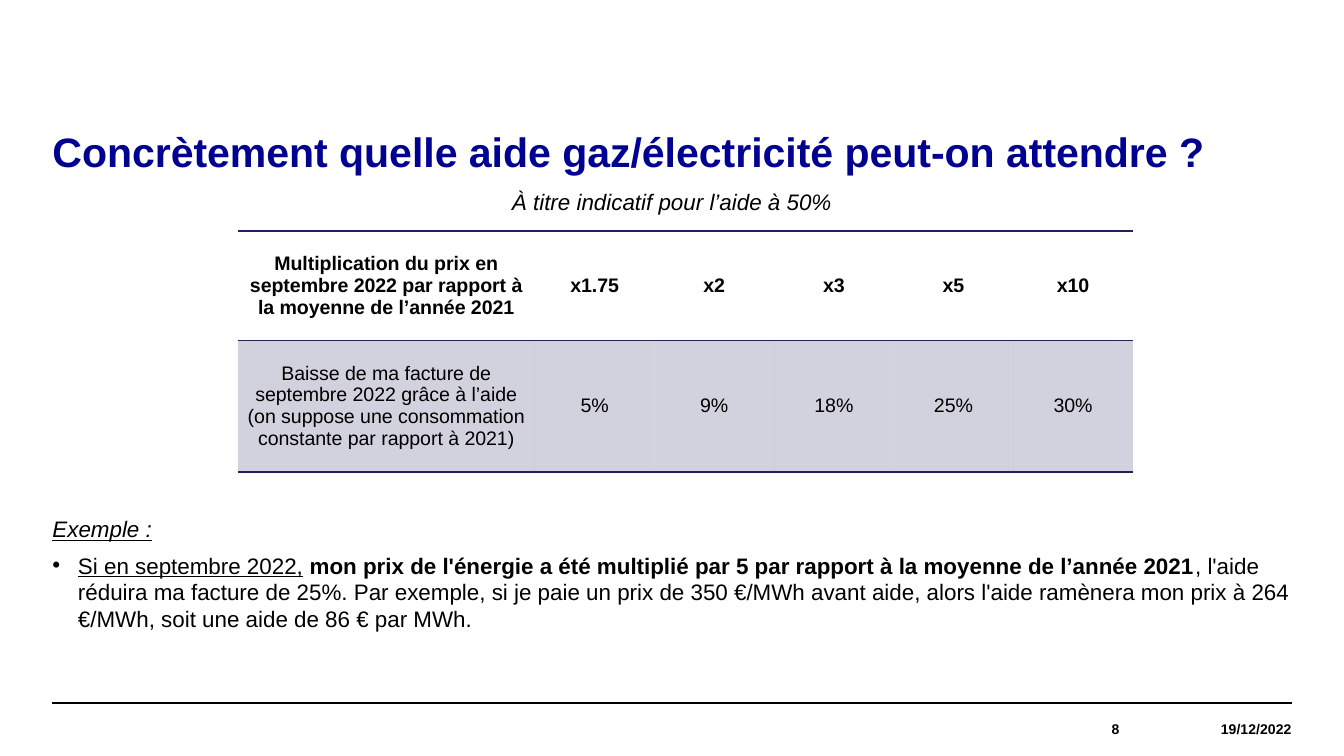
"""Build the slide on the expected gas and electricity aid."""
import pptx
import pptx.dml.color
import pptx.enum.shapes
import pptx.enum.text
import pptx.oxml.ns
import pptx.util
from lxml import etree

Inches = pptx.util.Inches
Pt = pptx.util.Pt
ALIGN = pptx.enum.text.PP_ALIGN
ANCHOR = pptx.enum.text.MSO_ANCHOR
qn = pptx.oxml.ns.qn
COLORS = {"title": "000091", "text": "000000", "table": "21215A"}
LEFT, WIDTH = 0.39, 9.22


def add_run(paragraph, text, size, color="text", bold=False, italic=False, underline=False):
    """Add one formatted run to a paragraph."""
    run = paragraph.add_run()
    run.text = text
    run.font.name = "Arial"
    run.font.size = Pt(size)
    run.font.bold = bold
    run.font.italic = italic
    run.font.underline = underline
    run.font.color.rgb = pptx.dml.color.RGBColor.from_string(COLORS[color])


def place(shape, left, top, width, height, anchor):
    """Position a text shape and clear its margins."""
    shape.left, shape.top = Inches(left), Inches(top)
    shape.width, shape.height = Inches(width), Inches(height)
    frame = shape.text_frame
    frame.word_wrap = True
    frame.auto_size = pptx.enum.text.MSO_AUTO_SIZE.NONE
    frame.vertical_anchor = anchor
    frame.margin_left = frame.margin_right = frame.margin_top = frame.margin_bottom = 0
    return frame


presentation = pptx.Presentation()
presentation.slide_width = Inches(10)
presentation.slide_height = Inches(10) * 9 // 16
slide = presentation.slides.add_slide(presentation.slide_layouts[1])

title = place(slide.shapes.title, LEFT, 0.98, WIDTH, 0.79, ANCHOR.TOP).paragraphs[0]
title.alignment = ALIGN.LEFT
title.line_spacing = 0.9
add_run(title, "Concrètement quelle aide gaz/électricité peut-on attendre ?", 22, "title", bold=True)

body = place(slide.placeholders[1], LEFT, 1.4, WIDTH, 3.62, ANCHOR.TOP)
body_paragraphs = [
    (ALIGN.CENTER, 0, False, [("À titre indicatif pour l’aide à 50%", {"italic": True})]),
    (ALIGN.LEFT, 156, False, [("Exemple :", {"italic": True, "underline": True})]),
    (ALIGN.LEFT, 0, True, [
        ("Si en septembre 2022,", {"underline": True}),
        (" ", {}),
        ("mon prix de l'énergie a été multiplié par 5 par rapport à la moyenne de l’année 2021",
         {"bold": True}),
        (", l'aide réduira ma facture de 25%. Par exemple, si je paie un prix de 350 €/MWh avant aide, "
         "alors l'aide ramènera mon prix à 264 €/MWh, soit une aide de 86 € par MWh.", {}),
    ]),
]
for index, (alignment, space_before, bulleted, runs) in enumerate(body_paragraphs):
    paragraph = body.paragraphs[0] if index == 0 else body.add_paragraph()
    paragraph.alignment = alignment
    paragraph.line_spacing = 1.0
    paragraph.space_before = Pt(space_before)
    paragraph.space_after = Pt(5)
    properties = paragraph._p.get_or_add_pPr()
    indent = Inches(0.19) if bulleted else 0
    properties.set("marL", str(indent))
    properties.set("indent", str(-indent))
    if bulleted:
        etree.SubElement(properties, qn("a:buChar")).set("char", "•")
    else:
        etree.SubElement(properties, qn("a:buNone"))
    for text, style in runs:
        add_run(paragraph, text, 12, **style)

rows = [
    [["Multiplication du prix en septembre 2022 par rapport à la moyenne de l’année 2021"],
     ["x1.75"], ["x2"], ["x3"], ["x5"], ["x10"]],
    [["Baisse de ma facture de septembre 2022 grâce à l’aide",
      "(on suppose une consommation constante par rapport à 2021)"],
     ["5%"], ["9%"], ["18%"], ["25%"], ["30%"]],
]
borders = [[("a:lnT", 1), ("a:lnB", 0.5)], [("a:lnT", 0.5), ("a:lnB", 1)]]
graphic = slide.shapes.add_table(2, 6, Inches(1.77), Inches(1.72), Inches(6.66), Inches(1.79))
table = graphic.table
table.horz_banding = False
table._tbl.tblPr.find(qn("a:tableStyleId")).text = "{2D5ABB26-0587-4C30-8999-92F81FD0307C}"
for index, column in enumerate(table.columns):
    column.width = Inches(2.21 if index == 0 else 0.89)
for row, height in zip(table.rows, (0.81, 0.98)):
    row.height = Inches(height)
for row_index, row in enumerate(rows):
    for column_index, lines in enumerate(row):
        cell = table.cell(row_index, column_index)
        cell.vertical_anchor = ANCHOR.MIDDLE
        cell.margin_left = cell.margin_right = Inches(0.05)
        cell.margin_top = cell.margin_bottom = Inches(0.01)
        for index, text in enumerate(lines):
            paragraph = cell.text_frame.paragraphs[0] if index == 0 else cell.text_frame.add_paragraph()
            paragraph.alignment = ALIGN.CENTER
            add_run(paragraph, text, 10.5, bold=row_index == 0)
        properties = cell._tc.get_or_add_tcPr()
        if row_index == 0:
            cell.fill.background()
        else:
            cell.fill.solid()
            cell.fill.fore_color.rgb = pptx.dml.color.RGBColor.from_string(COLORS["table"])
            color = properties.find(".//" + qn("a:srgbClr"))
            etree.SubElement(color, qn("a:alpha")).set("val", "20000")
        for position, (tag, width) in enumerate(borders[row_index]):
            line = etree.Element(qn(tag), w=str(Pt(width)))
            fill = etree.SubElement(line, qn("a:solidFill"))
            etree.SubElement(fill, qn("a:srgbClr")).set("val", COLORS["table"])
            properties.insert(position, line)

rule = slide.shapes.add_connector(
    pptx.enum.shapes.MSO_CONNECTOR.STRAIGHT, Inches(LEFT), Inches(5.23), Inches(LEFT + WIDTH), Inches(5.23))
rule.line.color.rgb = pptx.dml.color.RGBColor.from_string(COLORS["text"])
rule.line.width = Pt(0.8)
etree.SubElement(rule._element.spPr, qn("a:effectLst"))

for text, left, width in [("19/12/2022", 8.33, 1.28), ("8", 6.85, 1.48)]:
    box = slide.shapes.add_textbox(0, 0, 0, 0)
    paragraph = place(box, left, 5.23, width, 0.39, ANCHOR.MIDDLE).paragraphs[0]
    paragraph.alignment = ALIGN.RIGHT
    add_run(paragraph, text, 7.5, bold=True)

presentation.save("out.pptx")
